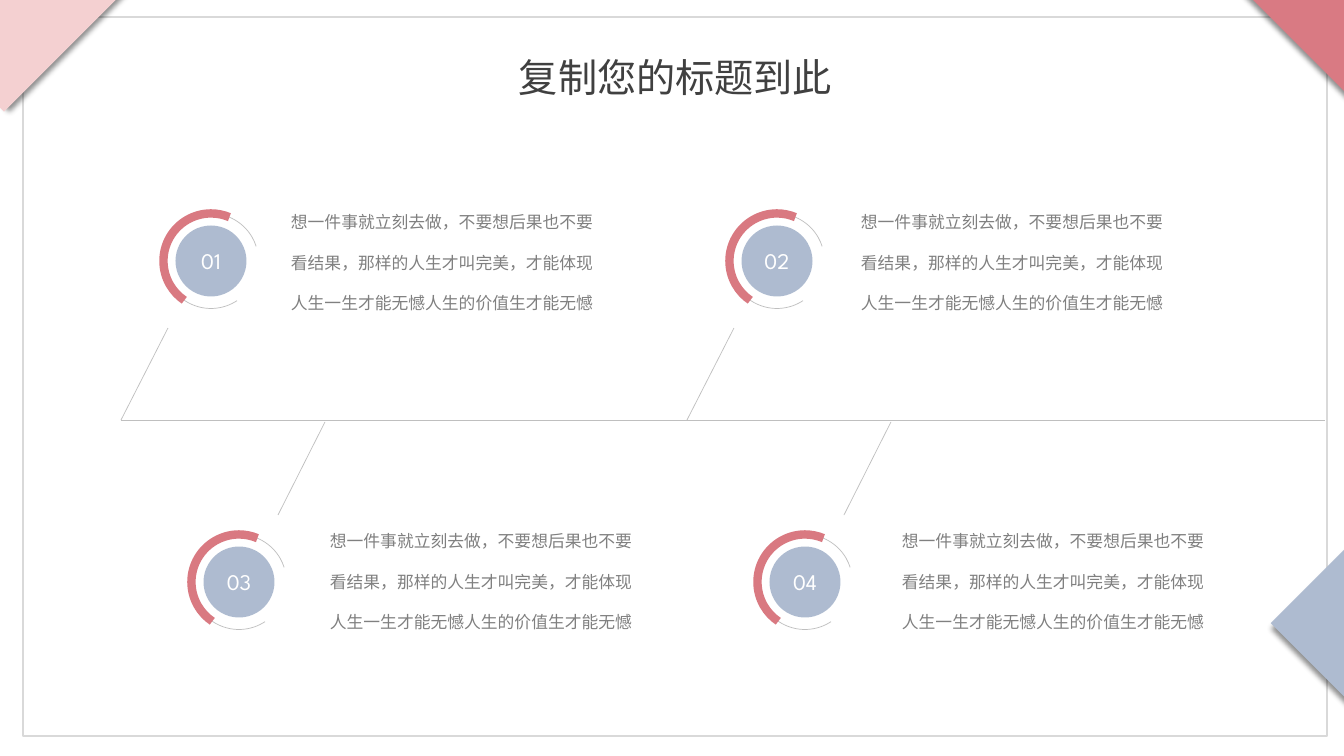
from lxml import etree
from pptx import Presentation
from pptx.dml.color import RGBColor
from pptx.enum.shapes import MSO_CONNECTOR, MSO_SHAPE
from pptx.enum.text import MSO_ANCHOR, MSO_AUTO_SIZE, PP_ALIGN
from pptx.oxml import parse_xml
from pptx.oxml.ns import qn
from pptx.util import Pt

RECT, OVAL, ARC = MSO_SHAPE.RECTANGLE, MSO_SHAPE.OVAL, MSO_SHAPE.ARC
LINE = MSO_CONNECTOR.STRAIGHT
MID, GROW = MSO_ANCHOR.MIDDLE, MSO_AUTO_SIZE.SHAPE_TO_FIT_TEXT
MAIN = "http://schemas.openxmlformats.org/drawingml/2006/main"

COLORS = {
    "white": "FFFFFF", "frame": "D9D9D9", "pink": "F4D0D1", "red": "D97A83",
    "ring": "D97981", "blue": "AEBBD0", "rule": "BFBFBF",
    "title": "404040", "body": "808080",
}
HAN, LATIN = "Noto Sans CJK SC", "League Spartan"

TITLE = "复制您的标题到此"
BODY = "想一件事就立刻去做，不要想后果也不要看结果，那样的人生才叫完美，才能体现人生一生才能无憾人生的价值生才能无憾"
CORNERS = [
    ((-62, -48, 169, 117), "pink", 0),
    ((1284, -93, 91, 210), "red", 90),
    ((1303, 551, 142, 150), "blue", 90),
]
ITEMS = [
    ("01", 0, 0, 281),
    ("03", 0, 1, 320),
    ("02", 1, 0, 851),
    ("04", 1, 1, 892),
]
ROWS = [
    {"x": 211, "y": 261, "text": 187, "foot": (-90, 420), "tip": (-43, 67)},
    {"x": 239, "y": 582, "text": 506, "foot": (86, 422), "tip": (39, -67)},
]
STEP = 566
DISC, RING = 71, 95
ARCS = [("rule", 0.5, 34.06, 205.29), ("ring", 6, 74.49, 175.71)]

PX = 12192000 / 1344


def emu(*nums):
    return [round(n * PX) for n in nums]


def rgb(name):
    return RGBColor.from_string(COLORS[name])


def put(obj, **vals):
    for key, val in vals.items():
        setattr(obj, key, val)


def stroke(obj, color, width):
    obj.line.color.rgb = rgb(color)
    obj.line.width = Pt(width)


def shape(kind, box, fill=None):
    item = slide.shapes.add_shape(kind, *emu(*box))
    item.shadow.inherit = False
    if fill:
        item.fill.solid()
        item.fill.fore_color.rgb = rgb(fill)
    else:
        item.fill.background()
    item.line.fill.background()
    return item


def shade(item, angle):
    item._element.spPr.find(qn("a:effectLst")).append(parse_xml(
        f'<a:outerShdw xmlns:a="{MAIN}" blurRad="50800" dist="50800" '
        f'dir="{angle * 60000}" algn="ctr" rotWithShape="0">'
        '<a:srgbClr val="000000"><a:alpha val="44000"/></a:srgbClr></a:outerShdw>'))


def rule(start, end):
    line = slide.shapes.add_connector(LINE, *emu(*start, *end))
    stroke(line, "rule", 0.5)
    etree.SubElement(line._element.spPr, qn("a:effectLst"))


def write(frame, text, size, color, font, align=None, space=None):
    para = frame.paragraphs[0]
    put(para, alignment=align, line_spacing=space)
    run = para.add_run()
    run.text = text
    put(run.font, size=Pt(size), name=font)
    run.font.color.rgb = rgb(color)
    east = etree.SubElement(run._r.get_or_add_rPr(), qn("a:ea"))
    east.set("typeface", font)


def label(box, wrap, *args, **vals):
    frame = slide.shapes.add_textbox(*emu(*box)).text_frame
    put(frame, word_wrap=wrap, auto_size=GROW)
    write(frame, *args, **vals)


def badge(num, x, y):
    half = DISC / 2
    disc = shape(OVAL, (x - half, y - half, DISC, DISC), "blue")
    left, top = emu(12, 6)
    put(disc.text_frame, vertical_anchor=MID, margin_left=left,
        margin_right=left, margin_top=top, margin_bottom=top)
    write(disc.text_frame, num, 16, "white", LATIN, PP_ALIGN.CENTER)
    half = RING / 2
    for color, width, start, end in ARCS:
        arc = shape(ARC, (x - half, y - half, RING, RING))
        arc.adjustments[0] = start
        arc.adjustments[1] = end
        stroke(arc, color, width)


deck = Presentation()
deck.slide_width, deck.slide_height = emu(1344, 756)
slide = deck.slides.add_slide(deck.slide_layouts[6])

stroke(shape(RECT, (23, 17, 1304, 719), "white"), "frame", 1)
for box, color, angle in CORNERS:
    corner = shape(RECT, box, color)
    corner.rotation = 315
    shade(corner, angle)
label((507, 48, 337, 57), False, TITLE, 28, "title", HAN, align=PP_ALIGN.CENTER)

rule((121, 420), (1325, 420))
for num, col, row, left in ITEMS:
    spec = ROWS[row]
    x, y = spec["x"] + col * STEP, spec["y"]
    (foot, base), (tip, drop) = spec["foot"], spec["tip"]
    rule((x + foot, base), (x + tip, y + drop))
    badge(num, x, y)
    label((left, spec["text"], 331, 126), True, BODY, 12, "body", HAN, space=2.0)

deck.save("out.pptx")
